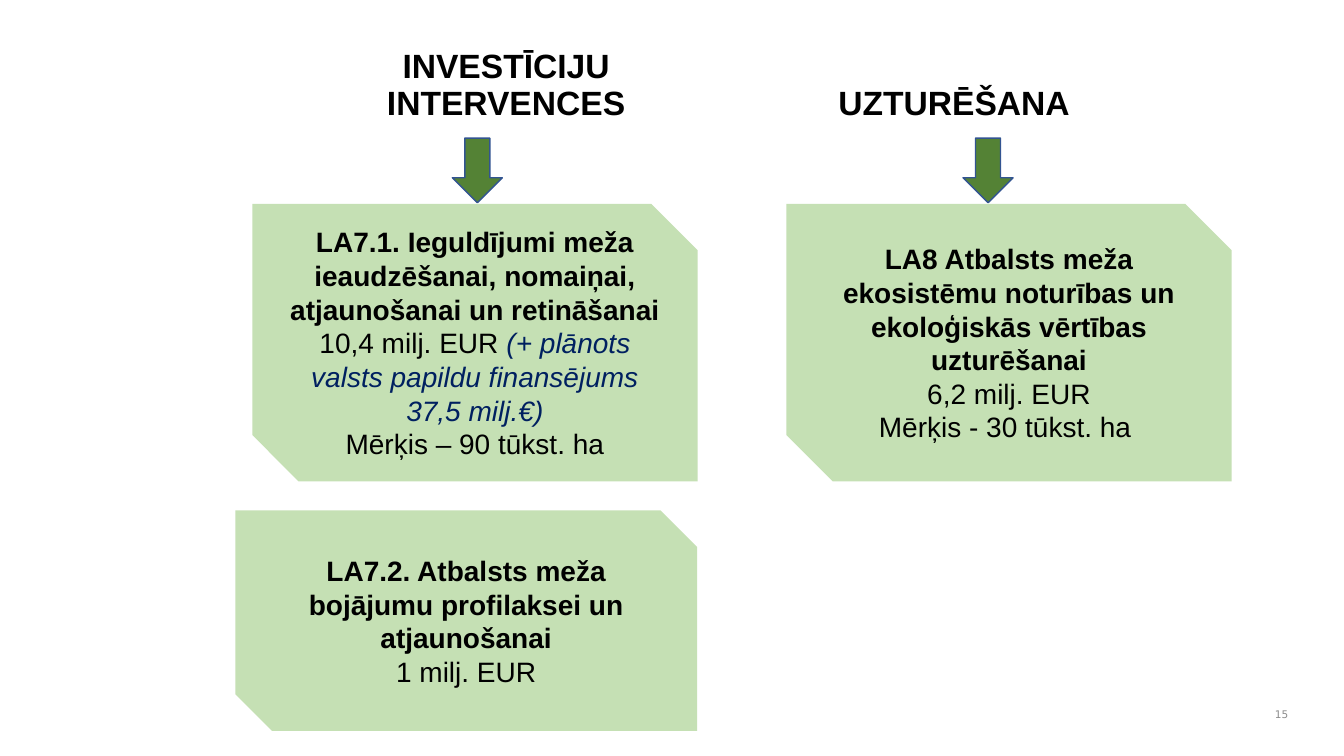
from pptx import Presentation
from pptx.dml.color import RGBColor
from pptx.enum.shapes import MSO_SHAPE
from pptx.enum.text import MSO_ANCHOR, PP_ALIGN
from pptx.util import Cm, Pt

SNIPPED = MSO_SHAPE.SNIP_2_DIAG_RECTANGLE
DOWN_ARROW = MSO_SHAPE.DOWN_ARROW
MIDDLE, BOTTOM = MSO_ANCHOR.MIDDLE, MSO_ANCHOR.BOTTOM
CENTER, RIGHT = PP_ALIGN.CENTER, PP_ALIGN.RIGHT

BLACK, NAVY = "000000", "002060"
PALE_GREEN, GREEN, BLUE = "C5E0B4", "548235", "325491"


def color(hex_string):
    return RGBColor.from_string(hex_string)


def style(run, size, ink=BLACK, bold=False, italic=False, name="Arial"):
    font = run.font
    font.name, font.size, font.bold, font.italic = name, Pt(size), bold, italic
    font.color.rgb = color(ink)


prs = Presentation()
prs.slide_width, prs.slide_height = Cm(33.87), Cm(19.05)
slide = prs.slides.add_slide(prs.slide_layouts[6])

# Slide number
number_box = slide.shapes.add_textbox(Cm(31.6), Cm(17.58), Cm(1.12), Cm(0.84))
number_frame = number_box.text_frame
number_frame.word_wrap = True
number_frame.vertical_anchor = MIDDLE
number_frame.text = "15"
number_frame.paragraphs[0].alignment = RIGHT
style(number_frame.paragraphs[0].runs[0], 7.5, "8C8C8C", name="DejaVu Sans")

# Measures: left, top, width, height, bold title, then lines of (text, colour)
measures = [
    (6.36, 5.14, 11.22, 6.99,
     "LA7.1. Ieguldījumi meža ieaudzēšanai, nomaiņai, atjaunošanai un retināšanai",
     [[("10,4 milj. EUR ", BLACK),
       ("(+ plānots valsts papildu finansējums 37,5 milj.€)", NAVY)],
      [("Mērķis – 90 tūkst. ha", BLACK)]]),
    (5.93, 12.86, 11.64, 5.56,
     "LA7.2. Atbalsts meža bojājumu profilaksei un atjaunošanai",
     [[("1 milj. EUR", BLACK)]]),
    (19.82, 5.14, 11.22, 6.99,
     "LA8 Atbalsts meža ekosistēmu noturības un ekoloģiskās vērtības uzturēšanai",
     [[("6,2 milj. EUR", BLACK)], [("Mērķis - 30 tūkst. ha ", BLACK)]]),
]
for left, top, width, height, title, details in measures:
    card = slide.shapes.add_shape(SNIPPED, Cm(left), Cm(top), Cm(width), Cm(height))
    card.shadow.inherit = False
    card.fill.solid()
    card.fill.fore_color.rgb = color(PALE_GREEN)
    card.line.fill.background()
    frame = card.text_frame
    frame.word_wrap = True
    frame.vertical_anchor = MIDDLE
    frame.text = title
    style(frame.paragraphs[0].runs[0], 20, bold=True)
    for detail in details:
        line = frame.add_paragraph()
        for text, ink in detail:
            run = line.add_run()
            run.text = text
            style(run, 20, ink, italic=ink == NAVY)
    for paragraph in frame.paragraphs:
        paragraph.alignment = CENTER
        paragraph.line_spacing = Pt(24)

# Column headings
headings = slide.shapes.add_table(1, 2, Cm(7.11), Cm(0.94), Cm(22.58), Cm(2.2)).table
headings.first_row = headings.horz_banding = False
for cell, heading in zip(headings.rows[0].cells, ["INVESTĪCIJU INTERVENCES", "UZTURĒŠANA"]):
    cell.fill.background()
    cell.vertical_anchor = BOTTOM
    cell.text = heading
    cell.text_frame.paragraphs[0].alignment = CENTER
    style(cell.text_frame.paragraphs[0].runs[0], 24, bold=True)

# Arrows from headings to measures
for left in (11.4, 24.27):
    arrow = slide.shapes.add_shape(DOWN_ARROW, Cm(left), Cm(3.48), Cm(1.26), Cm(1.63))
    arrow.shadow.inherit = False
    arrow.fill.solid()
    arrow.fill.fore_color.rgb = color(GREEN)
    arrow.line.color.rgb = color(BLUE)
    arrow.line.width = Pt(1)

prs.save("out.pptx")
